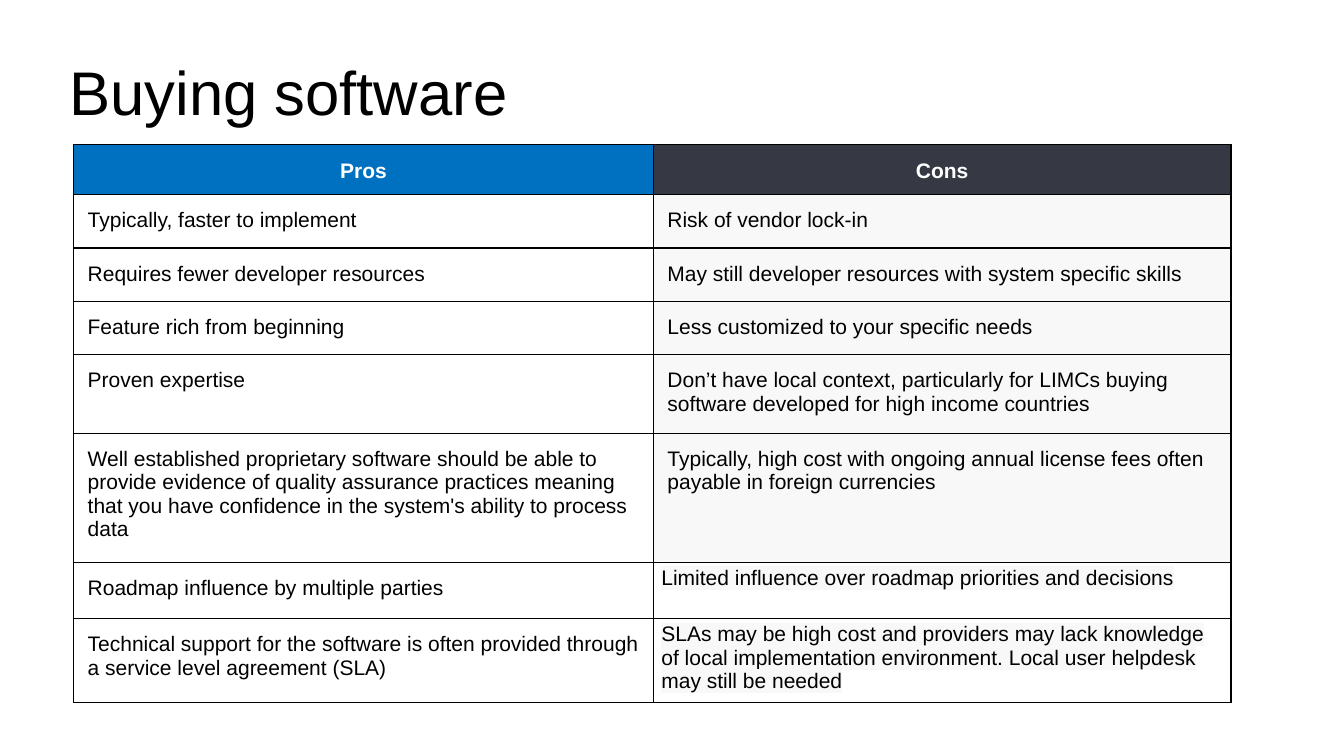
import pptx
import pptx.util
import pptx.dml.color
import pptx.enum.text
import pptx.oxml
import pptx.oxml.ns
from pptx.util import Inches

BLACK, WHITE, BLUE, SLATE, PALE = "000000", "FFFFFF", "0070C0", "363943", "F8F8F8"
DRAWING_NS = pptx.oxml.ns.nsdecls("a")


def color(hex_text):
    return pptx.dml.color.RGBColor.from_string(hex_text)


def write(frame, text, size=15, ink=BLACK, bold=False, align="LEFT", anchor="TOP",
          margins=(0.14, 0.14, 0.14, 0.14), spacing=None, highlight=None):
    frame.word_wrap = True
    frame.vertical_anchor = pptx.enum.text.MSO_ANCHOR[anchor]
    (frame.margin_left, frame.margin_top,
     frame.margin_right, frame.margin_bottom) = map(Inches, margins)
    paragraph = frame.paragraphs[0]
    paragraph.alignment = pptx.enum.text.PP_ALIGN[align]
    paragraph.line_spacing = spacing
    run = paragraph.add_run()
    run.text = text
    run.font.name = "Arial"
    run.font.size = pptx.util.Pt(size)
    run.font.bold = bold
    run.font.color.rgb = color(ink)
    if highlight:
        ink_fill = run.font.fill._xPr.find(pptx.oxml.ns.qn("a:solidFill"))
        ink_fill.addnext(pptx.oxml.parse_xml(
            f'<a:highlight {DRAWING_NS}><a:srgbClr val="{highlight}"/></a:highlight>'))


deck = pptx.Presentation()
deck.slide_width, deck.slide_height = Inches(13.33), Inches(7.5)
slide = deck.slides.add_slide(deck.slide_layouts[6])

# Title
title = slide.shapes.add_textbox(Inches(0.59), Inches(0.09), Inches(11.03), Inches(1.71))
write(title.text_frame, "Buying software", size=44, anchor="MIDDLE",
      margins=(0.1, 0.05, 0.1, 0.05), spacing=0.9)

# Pros and cons, with row heights
comparison = [
    (0.49, "Pros", "Cons"),
    (0.53, "Typically, faster to implement", "Risk of vendor lock-in"),
    (0.53, "Requires fewer developer resources",
     "May still developer resources with system specific skills"),
    (0.53, "Feature rich from beginning", "Less customized to your specific needs"),
    (0.77, "Proven expertise",
     "Don’t have local context, particularly for LIMCs buying software developed "
     "for high income countries"),
    (1.26, "Well established proprietary software should be able to provide evidence of "
     "quality assurance practices meaning that you have confidence in the system's "
     "ability to process data",
     "Typically, high cost with ongoing annual license fees often payable in foreign currencies"),
    (0.56, "Roadmap influence by multiple parties",
     "Limited influence over roadmap priorities and decisions"),
    (0.82, "Technical support for the software is often provided through a service level "
     "agreement (SLA)",
     "SLAs may be high cost and providers may lack knowledge of local implementation "
     "environment. Local user helpdesk may still be needed"),
]
table = slide.shapes.add_table(len(comparison), 2, Inches(0.73), Inches(1.43),
                               Inches(11.48), Inches(5.47)).table
table.first_row = table.horz_banding = False
table.columns[0].width, table.columns[1].width = Inches(5.75), Inches(5.73)

for row, (height, *entries) in enumerate(comparison):
    table.rows[row].height = Inches(height)
    for column, entry in enumerate(entries):
        cell = table.cell(row, column)
        is_con = column == 1
        tight = is_con and row >= 6

        # Black rules on all four sides
        properties = cell._tc.get_or_add_tcPr()
        for side in "LRTB":
            properties.append(pptx.oxml.parse_xml(
                f'<a:ln{side} {DRAWING_NS} w="12700"><a:solidFill>'
                f'<a:srgbClr val="{BLACK}"/></a:solidFill></a:ln{side}>'))

        # Header colours, pale cons, plain cells elsewhere
        if row == 0:
            background = SLATE if is_con else BLUE
        else:
            background = PALE if is_con and not tight else None
        if background:
            cell.fill.solid()
            cell.fill.fore_color.rgb = color(background)
        else:
            cell.fill.background()

        # Cell text
        if row == 0:
            style = dict(ink=WHITE, bold=True, align="CENTER", margins=(0.14, 0.14, 0.14, 0.11))
        else:
            style = dict(margins=(0.08, 0.04, 0.08, 0.04)) if tight else {}
        if is_con:
            style["highlight"] = SLATE if row == 0 else PALE
        write(cell.text_frame, entry, **style)
        cell.margin_left, cell.margin_top, cell.margin_right, cell.margin_bottom = map(
            Inches, style.get("margins", (0.14, 0.14, 0.14, 0.14)))
        cell.vertical_anchor = pptx.enum.text.MSO_ANCHOR.MIDDLE if row == 0 else None

deck.save("out.pptx")
